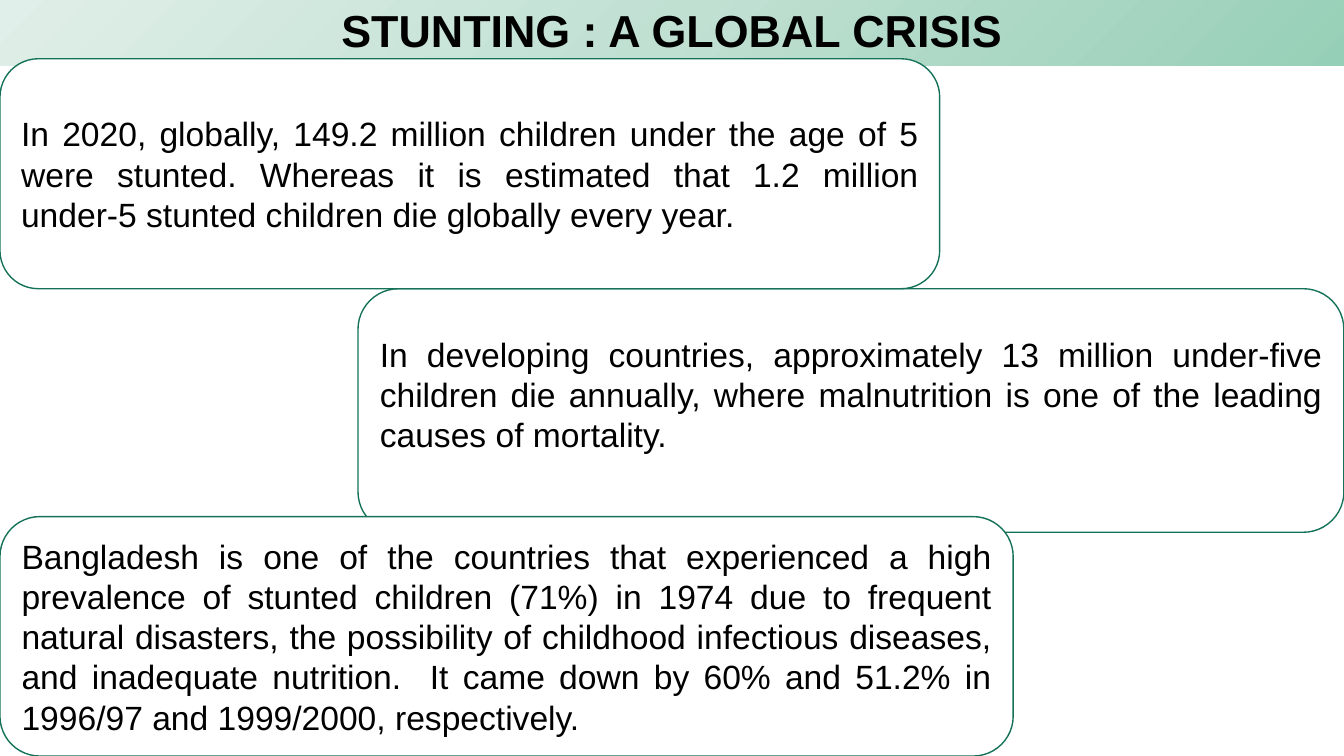
import dataclasses

import pptx
import pptx.dml.color
import pptx.enum.shapes
import pptx.enum.text
import pptx.oxml
import pptx.oxml.ns
import pptx.util

PX = 9525
WIDE, HIGH = 1280, 720
INK, EDGE, PAPER = "000000", "157259", "FFFFFF"
STOPS = {0: "96CFB7", 50: "C0E0D2", 100: "E0EFE9"}
ALIGN = pptx.enum.text.PP_ALIGN


@dataclasses.dataclass
class Card:
    left: int
    top: int
    width: int
    height: int
    text: str
    foot: int = 5


CARDS = [
    Card(341, 275, 939, 232,
         "In developing countries, approximately 13 million under-five children "
         "die annually, where malnutrition is one of the leading causes of "
         "mortality.", foot=36),
    Card(0, 56, 895, 219,
         "In 2020, globally, 149.2 million children under the age of 5 were "
         "stunted. Whereas it is estimated that 1.2 million under-5 stunted "
         "children die globally every year."),
    Card(0, 492, 965, 228,
         "Bangladesh is one of the countries that experienced a high prevalence "
         "of stunted children (71%) in 1974 due to frequent natural disasters, "
         "the possibility of childhood infectious diseases, and inadequate "
         "nutrition.  It came down by 60% and 51.2% in 1996/97 and 1999/2000, "
         "respectively."),
]


def px(size: int) -> pptx.util.Emu:
    return pptx.util.Emu(size * PX)


def color(code: str) -> pptx.dml.color.RGBColor:
    return pptx.dml.color.RGBColor.from_string(code)


def apply(item: object, form: dict) -> None:
    for name, value in form.items():
        setattr(item, name, value)


def write(shape, text: str, size: int, bold: bool, para: dict) -> None:
    frame = shape.text_frame
    frame.text = text
    apply(frame, {"word_wrap": True,
                  "auto_size": pptx.enum.text.MSO_AUTO_SIZE.NONE,
                  "vertical_anchor": pptx.enum.text.MSO_ANCHOR.MIDDLE})
    line = frame.paragraphs[0]
    apply(line, para)
    font = line.runs[0].font
    apply(font, {"name": "Arial", "size": pptx.util.Pt(size), "bold": bold})
    font.color.rgb = color(INK)


def shade(shape) -> None:
    """Fill with a radial gradient centred on the bottom right corner."""
    stops = "".join(
        f'<a:gs pos="{pos * 1000}"><a:srgbClr val="{code}"/></a:gs>'
        for pos, code in STOPS.items())
    space = pptx.oxml.ns.nsdecls("a")
    grad = pptx.oxml.parse_xml(
        f'<a:gradFill {space} rotWithShape="1"><a:gsLst>{stops}</a:gsLst>'
        '<a:path path="circle"><a:fillToRect l="100000" t="100000"/></a:path>'
        '</a:gradFill>')
    shape.element.spPr.append(grad)


def head(slide) -> None:
    title = slide.shapes.title
    apply(title, {"left": 0, "top": 0, "width": px(WIDE), "height": px(62)})
    shade(title)
    write(title, "STUNTING : A GLOBAL CRISIS", 32, True,
          {"alignment": ALIGN.CENTER, "line_spacing": 0.9})


def draw(slide, card: Card) -> None:
    box = slide.shapes.add_shape(
        pptx.enum.shapes.MSO_SHAPE.ROUNDED_RECTANGLE,
        px(card.left), px(card.top), px(card.width), px(card.height))
    box.shadow.inherit = False
    box.fill.solid()
    box.fill.fore_color.rgb = color(PAPER)
    box.line.color.rgb = color(EDGE)
    box.line.width = pptx.util.Pt(1)
    write(box, card.text, 24, False, {"alignment": ALIGN.JUSTIFY})
    box.text_frame.margin_bottom = px(card.foot)


def main() -> None:
    deck = pptx.Presentation()
    apply(deck, {"slide_width": px(WIDE), "slide_height": px(HIGH)})
    slide = deck.slides.add_slide(deck.slide_layouts.get_by_name("Title Only"))
    head(slide)
    for card in CARDS:
        draw(slide, card)
    deck.save("out.pptx")


if __name__ == "__main__":
    main()
